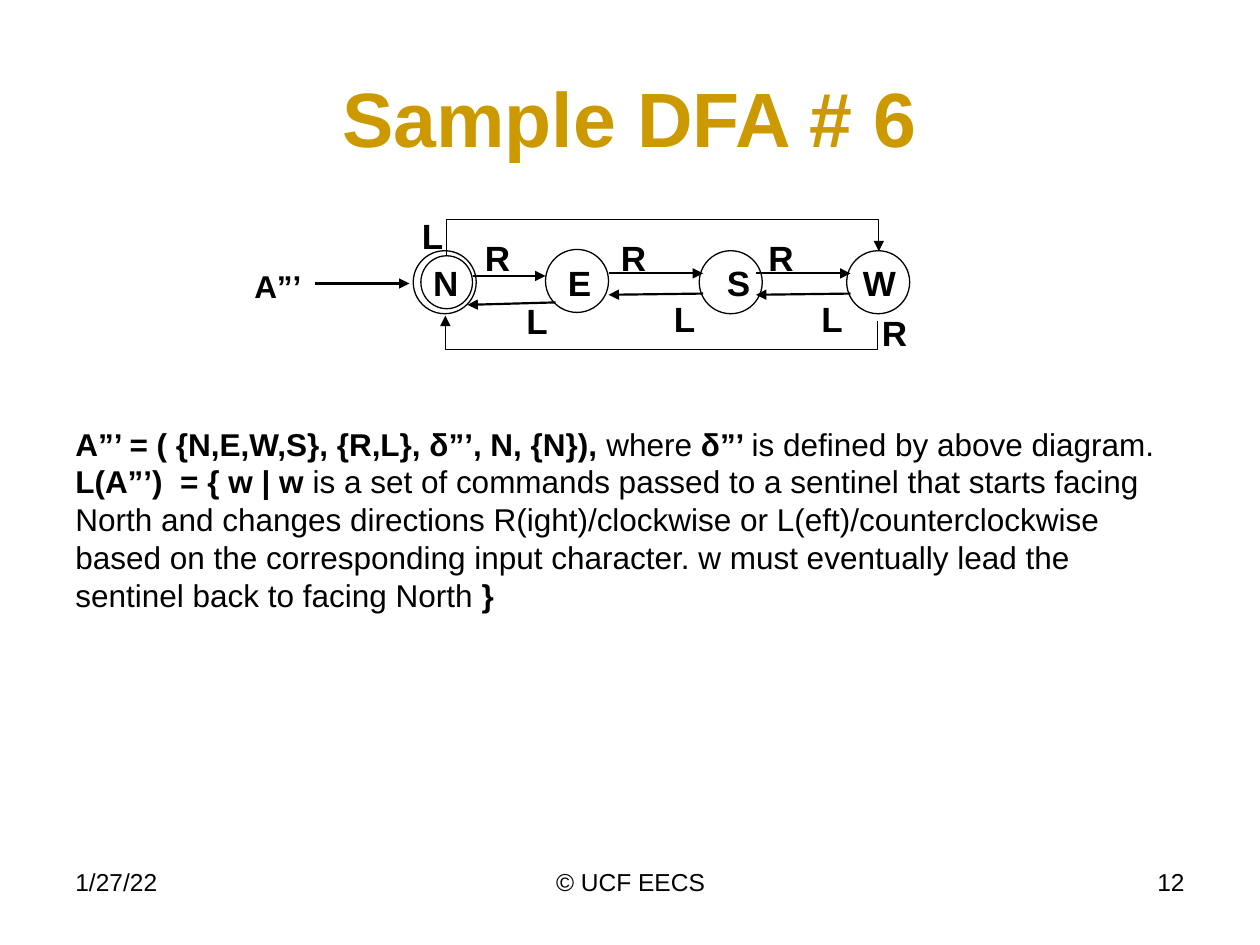
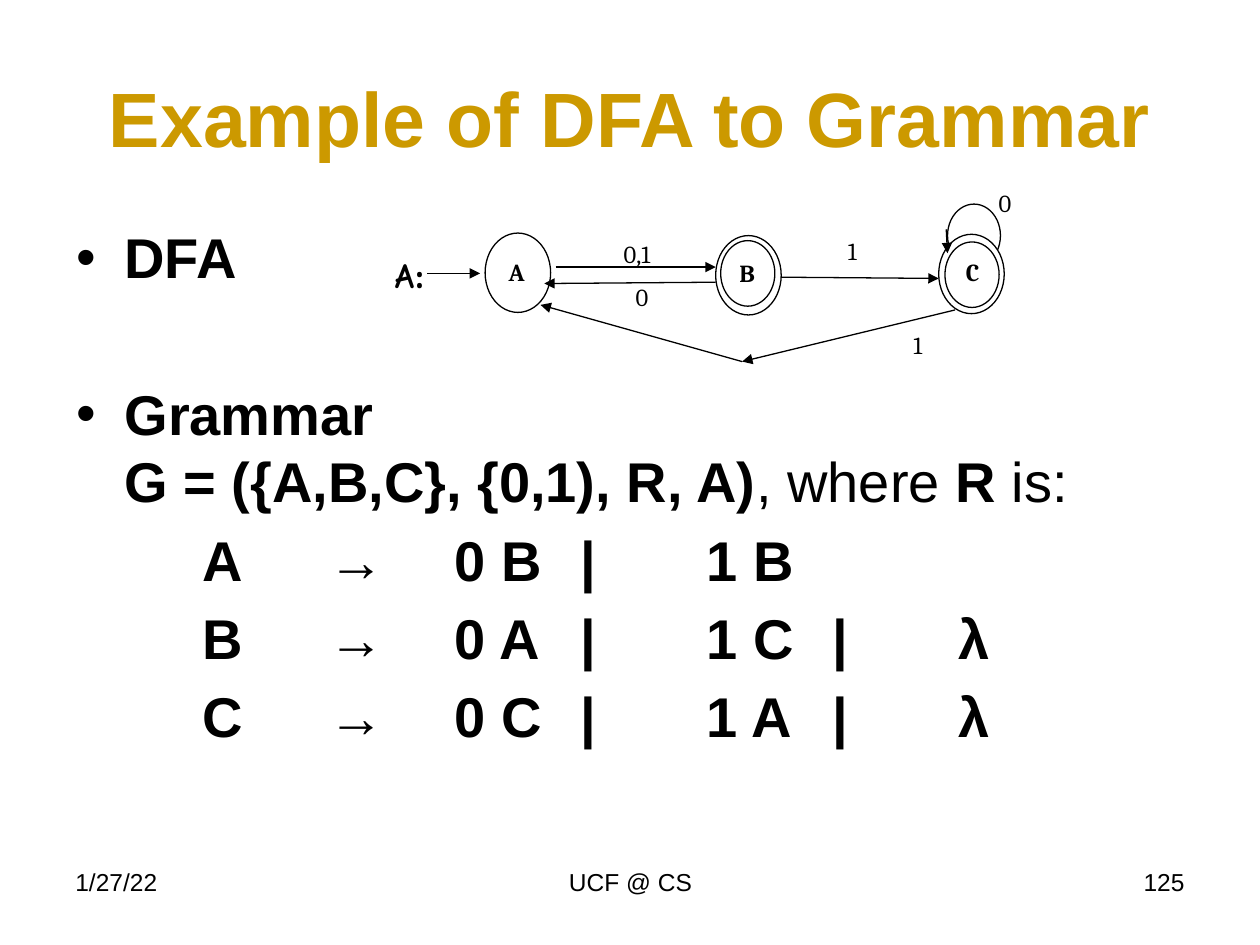
from pptx import Presentation
from pptx.dml.color import RGBColor
from pptx.enum.shapes import MSO_CONNECTOR, MSO_SHAPE
from pptx.enum.text import MSO_ANCHOR, PP_ALIGN
from pptx.oxml.ns import qn
from pptx.util import Inches, Pt
from lxml.etree import SubElement

BLACK, WHITE, GOLD = (RGBColor.from_string(code) for code in ("000000", "FFFFFF", "CC9900"))
LEFT, CENTER, RIGHT = PP_ALIGN.LEFT, PP_ALIGN.CENTER, PP_ALIGN.RIGHT


def add_text(page, at, paragraphs, size, font="Arial", align=LEFT, inset=0.1):
    """Each paragraph is a list of (text, bold) spans; a "\\n" span breaks the line."""
    box = page.shapes.add_textbox(*map(Inches, at))
    frame = box.text_frame
    frame.word_wrap = True
    frame.margin_left = frame.margin_right = Inches(inset)
    frame.margin_top = frame.margin_bottom = Inches(min(inset, 0.05))
    for index, spans in enumerate(paragraphs):
        para = frame.paragraphs[0] if index == 0 else frame.add_paragraph()
        para.alignment = align
        for text, bold in spans:
            if text == "\n":
                para.add_line_break()
                continue
            span = para.add_run()
            span.text = text
            span.font.name, span.font.size, span.font.bold = font, Pt(size), bold
            span.font.color.rgb = BLACK
    return box


def add_arrow(page, start, end, weight, kind=MSO_CONNECTOR.STRAIGHT, head="a:tailEnd"):
    arrow = page.shapes.add_connector(kind, *map(Inches, (*start, *end)))
    arrow.line.color.rgb = BLACK
    arrow.line.width = Pt(weight)
    properties = arrow._element.spPr
    SubElement(properties.find(qn("a:ln")), qn(head), type="triangle")
    SubElement(properties, qn("a:effectLst"))
    return arrow


# Deck with shared titles and footers
deck = Presentation()
deck.slide_width, deck.slide_height = Inches(10), Inches(7.5)
pages = []
for title_text, footer, number in [
    ("Sample DFA # 6", "© UCF EECS", "12"),
    ("Example of DFA to Grammar", "UCF @ CS", "125"),
]:
    page = deck.slides.add_slide(deck.slide_layouts[5])
    title = page.shapes.title
    title.left, title.top, title.width, title.height = map(Inches, (0.5, 0.3, 9, 1.25))
    title.text_frame.text = title_text
    title.text_frame.vertical_anchor = MSO_ANCHOR.MIDDLE
    para = title.text_frame.paragraphs[0]
    para.alignment = CENTER
    font = para.runs[0].font
    font.name, font.size, font.bold = "Arial", Pt(44), True
    font.color.rgb = GOLD
    for text, left, width, align in [
        ("1/27/22", 0.5, 2.33, LEFT), (footer, 3.42, 3.17, CENTER), (number, 7.17, 2.33, RIGHT),
    ]:
        add_text(page, (left, 6.83, width, 0.52), [[(text, False)]], 14, align=align)
    pages.append(page)
sentinel_page, grammar_page = pages

# States of both diagrams: the second ellipse of a pair marks an accepting state
for page, fill, ellipses in [
    (sentinel_page, None, [
        (3.28, 1.99, 0.5, 0.5), (3.34, 2.03, 0.41, 0.42), (4.33, 1.98, 0.5, 0.5),
        (5.55, 1.99, 0.5, 0.5), (6.72, 1.99, 0.5, 0.5),
    ]),
    (grammar_page, WHITE, [
        (7.52, 1.62, 0.42, 0.5), (3.85, 1.85, 0.52, 0.63),
        (7.45, 1.86, 0.52, 0.63), (7.5, 1.92, 0.43, 0.52),
        (5.68, 1.87, 0.52, 0.63), (5.72, 1.91, 0.43, 0.52),
    ]),
]:
    for at in ellipses:
        state = page.shapes.add_shape(MSO_SHAPE.OVAL, *map(Inches, at))
        state.shadow.inherit = False
        state.line.color.rgb = BLACK
        state.line.width = Pt(0.75)
        if fill is None:
            state.fill.background()
        else:
            state.fill.solid()
            state.fill.fore_color.rgb = fill

# Sentinel diagram: state and transition labels
for text, left, top in [
    ("N", 3.34, 2.03), ("E", 4.41, 2.03), ("S", 5.67, 2.03), ("W", 6.75, 2.03),
    ("R", 3.75, 1.83), ("R", 4.83, 1.83), ("R", 6, 1.83), ("R", 6.9, 2.42),
    ("L", 4.08, 2.33), ("L", 5.25, 2.31), ("L", 6.42, 2.31), ("L", 3.25, 1.65),
]:
    add_text(sentinel_page, (left, top, 0.47, 0.44), [[(text, True)]], 20)
add_text(sentinel_page, (1.92, 2.07, 0.7, 0.4), [[("A”’", True)]], 18)

# Sentinel diagram: straight transitions, then the two around the outside
for start, end in [
    ((2.5, 2.25), (3.25, 2.25)), ((3.75, 2.19), (4.33, 2.19)), ((4.41, 2.4), (3.71, 2.42)),
    ((4.83, 2.17), (5.58, 2.17)), ((5.58, 2.33), (4.83, 2.34)),
    ((6, 2.17), (6.75, 2.17)), ((6.75, 2.33), (6, 2.34)),
]:
    add_arrow(sentinel_page, start, end, 1.25)
for start, end, turn, bend, head in [
    ((5.28, 3.73), (5.24, 0.3), 90, 7.28, "a:tailEnd"),
    ((5.27, 0.81), (5.23, 4.24), 270, 6.65, "a:headEnd"),
]:
    loop = add_arrow(sentinel_page, start, end, 0.75, MSO_CONNECTOR.ELBOW, head)
    properties = loop._element.spPr
    properties.find(qn("a:xfrm")).set("rot", str(turn * 60000))
    geometry = properties.find(qn("a:prstGeom"))
    adjustments = geometry.find(qn("a:avLst"))
    if adjustments is None:
        adjustments = SubElement(geometry, qn("a:avLst"))
    SubElement(adjustments, qn("a:gd"), name="adj1", fmla=f"val {round(bend * 100000)}")

# Sentinel language definition
add_text(sentinel_page, (0.5, 3.32, 8.83, 1.62), [[
    ("A”’ = ( {N,E,W,S}, {R,L}, δ”’, Ν, {N}),", True),
    (" where ", False),
    ("δ”’ ", True),
    ("is defined by above diagram. ", False),
    ("L(A”’)  = { w | w ", True),
    ("is a set of commands passed to a sentinel that starts facing North and changes "
     "directions R(ight)/clockwise or L(eft)/counterclockwise based on the corresponding "
     "input character. w must eventually lead the sentinel back to facing North ", False),
    ("}", True),
]], 18)

# Grammar bullets and tabbed rules
body = add_text(grammar_page, (0.51, 1.72, 9, 4.95), [
    [("DFA", True)],
    [("Grammar", True), ("\n", True), ("G = ({A,B,C}, {0,1), R, A)", True),
     (", where ", False), ("R", True), (" is:", False)],
    [("\tA\t→\t0 B \t|\t1 B", True)],
    [("\tB\t→\t0 A\t|\t1 C\t|\tλ", True)],
    [("\tC\t→\t0 C\t|\t1 A\t|\tλ", True)],
], 32)
for index, para in enumerate(body.text_frame.paragraphs):
    para.space_before = Pt((0, 51, 6.4, 6.4, 6.4)[index])
    properties = para._p.get_or_add_pPr()
    if index < 2:
        properties.set("marL", str(Inches(0.38)))
        properties.set("indent", str(Inches(-0.38)))
        SubElement(properties, qn("a:buFont"), typeface="Arial")
        SubElement(properties, qn("a:buChar"), char="•")
    else:
        stops = SubElement(properties, qn("a:tabLst"))
        for inch in range(1, 8):
            SubElement(stops, qn("a:tab"), pos=str(Inches(inch)), algn="l")

# Grammar diagram: state names, transition labels and arrows
for text, left, top in [("A", 3.9, 1.99), ("C", 7.52, 1.99), ("B", 5.73, 2)]:
    add_text(grammar_page, (left, top, 0.4, 0.4), [[(text, True)]], 14, "Cambria", CENTER)
for text, left, top, width in [
    ("0", 7.87, 1.49, 0.21), ("0,1", 4.8, 1.9, 0.51), ("0", 4.99, 2.24, 0.21),
    ("1", 6.66, 1.87, 0.21), ("1", 7.18, 2.62, 0.21),
]:
    add_text(grammar_page, (left, top, width, 0.37), [[(text, False)]], 14, "Cambria", CENTER, 0)
start_label = add_text(grammar_page, (3.01, 2.01, 0.48, 0.35), [[("A", True), (":", True)]],
                       20, "Comic Neue", CENTER, 0)
start_label.text_frame.paragraphs[0].runs[1].font.name = "Cambria"
for start, end in [
    ((7.51, 1.82), (7.52, 2.01)), ((3.39, 2.17), (3.81, 2.17)), ((4.41, 2.12), (5.68, 2.12)),
    ((5.68, 2.24), (4.32, 2.25)), ((6.2, 2.2), (7.45, 2.21)),
    ((7.58, 2.46), (5.89, 2.87)), ((5.89, 2.87), (4.29, 2.42)),
]:
    add_arrow(grammar_page, start, end, 0.75)

deck.save("out.pptx")
